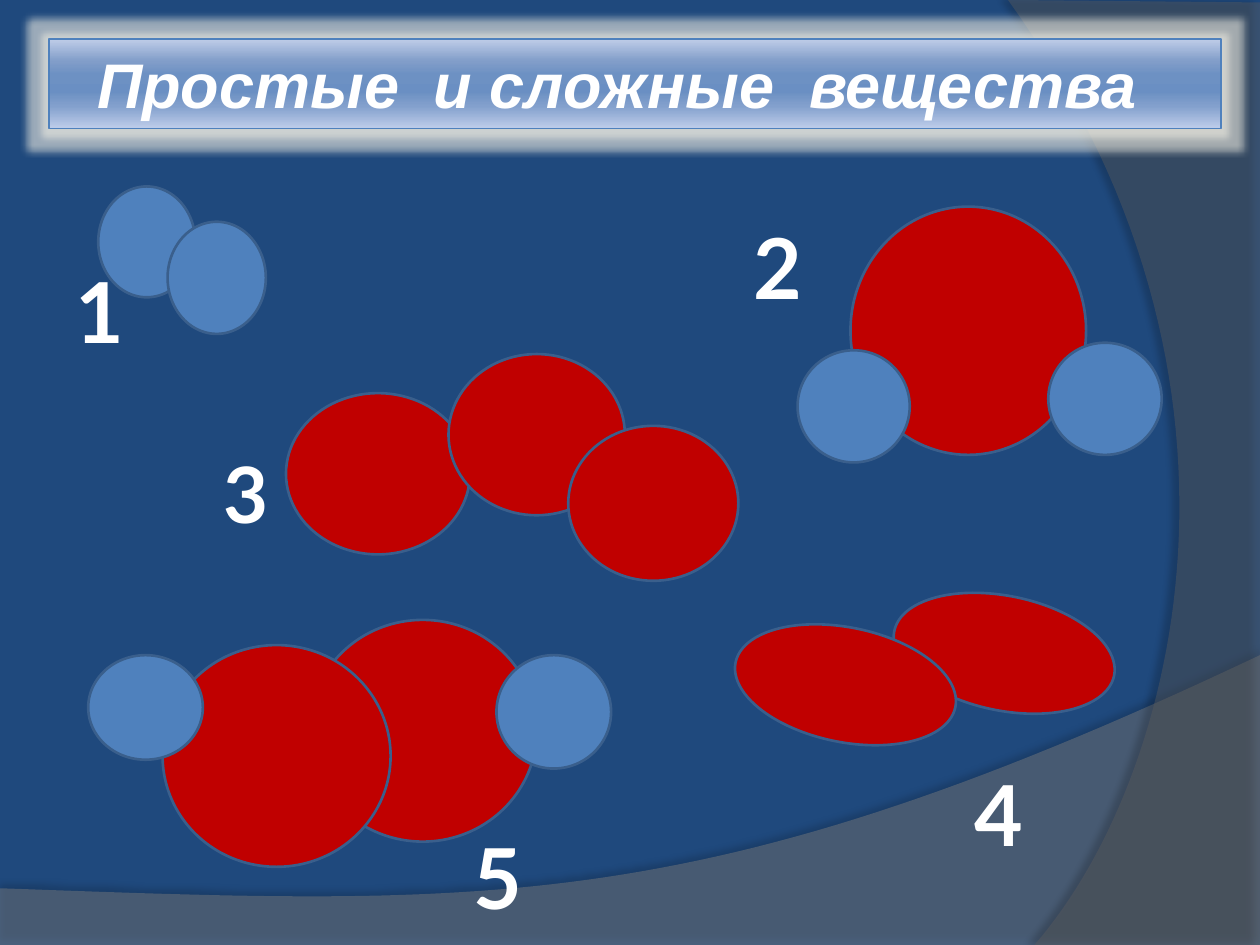
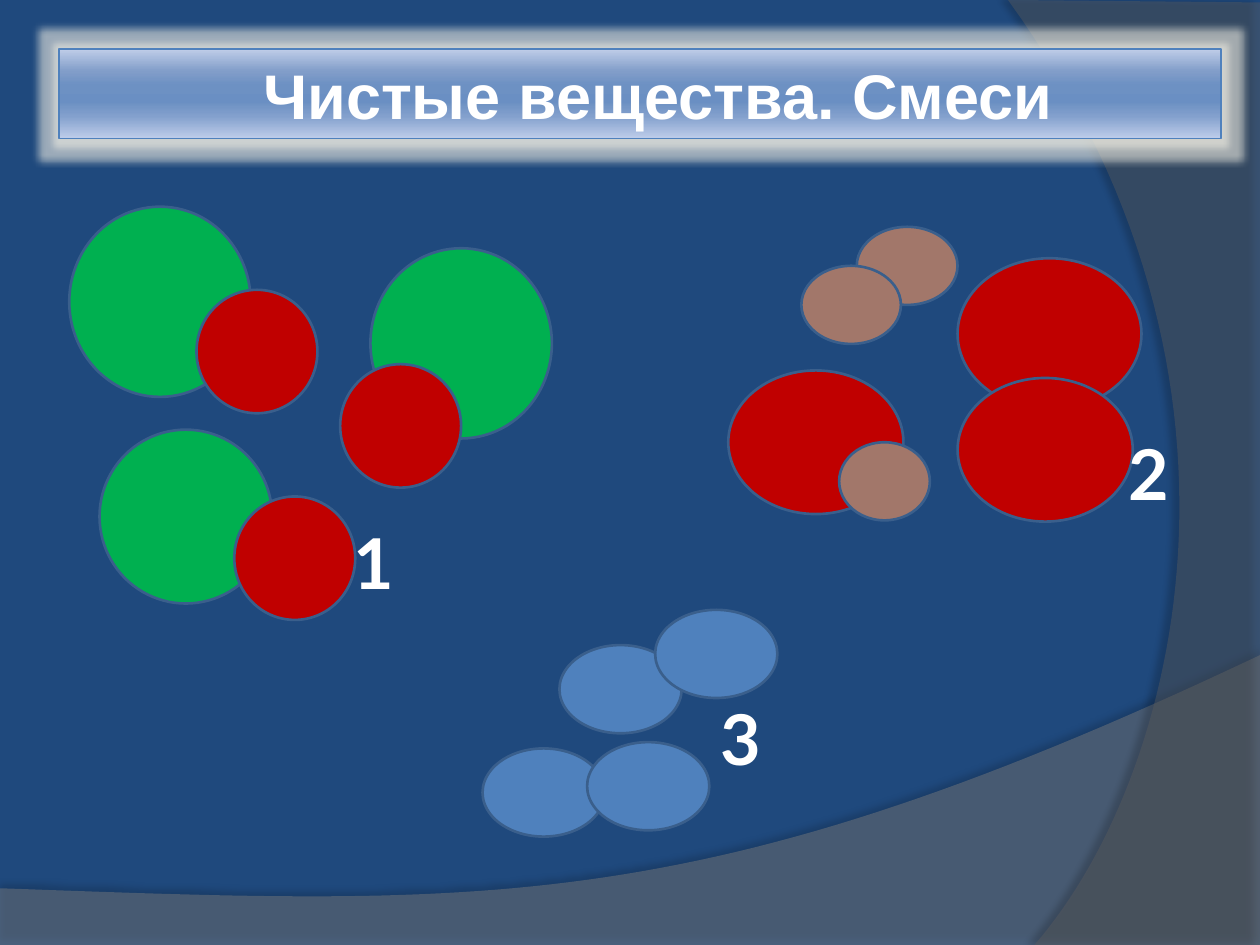
from dataclasses import dataclass

from lxml.etree import SubElement
from pptx import Presentation
from pptx.dml.color import RGBColor
from pptx.enum.shapes import MSO_SHAPE
from pptx.enum.text import MSO_ANCHOR, PP_ALIGN
from pptx.oxml.ns import qn
from pptx.util import Inches, Pt


@dataclass(frozen=True)
class Theme:
    background: str = "1F497D"
    blue: str = "4F81BD"
    red: str = "C00000"
    green: str = "00B050"
    brown: str = "A2776A"
    outline: str = "3A5F8C"
    text: str = "FFFFFF"
    glow: str = "EEECE1"
    shadow: str = "000000"
    title_font: str = "Arial"
    number_font: str = "Lato"
    title_size: float = 36
    outline_width: float = 1.5
    banner_line_width: float = 0.94
    banner_stops: tuple = (
        (0, "BFCDE8"), (25, "819DC9"), (40, "6D91C3"), (50, "6A8FC3"),
        (60, "6D91C3"), (75, "83A0CD"), (100, "BECDEA"))


THEME = Theme()
BLUE, RED, GREEN, BROWN = THEME.blue, THEME.red, THEME.green, THEME.brown

# Content: an atom is (colour, left, top, width, height, optional rotation);
# a number is (text, left, top, width, height, size, alignment, inset)
CENTER, LEFT = PP_ALIGN.CENTER, PP_ALIGN.LEFT
PAGES = [
    {
        "title": "Простые  и сложные  вещества",
        "italic": True,
        "banner": (0.39, 0.31, 9.3, 0.71),
        "insets": (0.1, 0.38),
        "molecules": [
            [(BLUE, 0.78, 1.48, 0.77, 0.88), (BLUE, 1.33, 1.76, 0.78, 0.89)],
            [(RED, 6.75, 1.64, 1.87, 1.97), (BLUE, 6.33, 2.78, 0.89, 0.89),
             (BLUE, 8.32, 2.72, 0.9, 0.89)],
            [(RED, 2.45, 4.92, 1.81, 1.76), (BLUE, 3.94, 5.2, 0.91, 0.9),
             (RED, 1.29, 5.12, 1.81, 1.76), (BLUE, 0.7, 5.2, 0.91, 0.83)],
            [(RED, 2.27, 3.12, 1.46, 1.28), (RED, 3.56, 2.81, 1.4, 1.28),
             (RED, 4.51, 3.38, 1.35, 1.23)],
            [(RED, 7.08, 4.73, 1.78, 0.91, 11.5),
             (RED, 5.82, 4.98, 1.78, 0.91, 11.5)],
        ],
        "numbers": [
            ("1", 0.55, 1.72, 0.7, 1.48, 48, LEFT, 0.05),
            ("2", 5.7, 1.64, 0.94, 0.94, 48, CENTER, 0.1),
            ("3", 1.56, 3.52, 0.78, 0.78, 44.4, CENTER, 0.1),
            ("4", 7.42, 6.02, 1.02, 0.86, 48, CENTER, 0.1),
            ("5", 3.44, 6.41, 1.02, 1.09, 48, CENTER, 0.1),
        ],
    },
    {
        "title": "Чистые вещества. Смеси",
        "italic": False,
        "banner": (0.47, 0.39, 9.22, 0.71),
        "insets": (0.38, 0.1),
        "molecules": [
            [(GREEN, 0.55, 1.64, 1.44, 1.51), (GREEN, 0.79, 3.41, 1.37, 1.38),
             (GREEN, 2.94, 1.97, 1.44, 1.51), (RED, 1.86, 3.94, 0.96, 0.98),
             (RED, 2.7, 2.89, 0.96, 0.98), (RED, 1.56, 2.3, 0.96, 0.98)],
            [(BLUE, left, top, 0.97, 0.7) for left, top in
             ((3.83, 5.94), (4.66, 5.89), (4.44, 5.12), (5.2, 4.84))],
            [(RED, 5.78, 2.94, 1.39, 1.14), (RED, 7.6, 2.05, 1.46, 1.2),
             (BROWN, 6.8, 1.8, 0.8, 0.62), (BROWN, 6.66, 3.51, 0.72, 0.62),
             (RED, 7.6, 3, 1.39, 1.14), (BROWN, 6.36, 2.11, 0.79, 0.62)],
        ],
        "numbers": [
            ("2", 8.91, 3.44, 0.55, 0.62, 40, LEFT, 0.05),
            ("1", 2.58, 3.91, 0.78, 1.09, 40, CENTER, 0.1),
            ("3", 5.62, 5.62, 0.31, 0.47, 40, CENTER, 0.1),
        ],
    },
]

# Background bands: a Bezier edge closed by corner points
BANDS = [
    {"curve": ((10, 5.2), (5.59, 7.29), (3.91, 7.19), (0, 7.05)),
     "corners": [(0, 7.5), (10, 7.5)],
     "color": "7F7F7F", "alpha": 45, "shadow": (35, 4, 3.5, 270)},
    {"curve": ((8.21, 7.5), (9.35, 6.19), (10.18, 3), (8, 0)),
     "corners": [(10, 0.02), (10, 7.5)],
     "color": "5E5E5E", "alpha": 40, "shadow": (45, 4, 4, 180)},
]
CURVE_STEPS = 60


def place(values):
    return [Inches(value) for value in values]


def add_color(parent, color, alpha=100):
    node = SubElement(parent, qn("a:srgbClr"), val=color)
    if alpha < 100:
        SubElement(node, qn("a:alpha"), val=str(alpha * 1000))


def style(shape, fill, line=None, width=THEME.outline_width):
    """Set a plain fill and line; no fill leaves it to the caller."""
    shape.shadow.inherit = False
    if fill:
        shape.fill.solid()
        shape.fill.fore_color.rgb = RGBColor.from_string(fill)
    if line:
        shape.line.color.rgb = RGBColor.from_string(line)
        shape.line.width = Pt(width)
    else:
        shape.line.fill.background()


def add_effect(shape, tag, color, alpha, **settings):
    effects = shape._element.spPr.find(qn("a:effectLst"))
    add_color(SubElement(effects, qn(tag), **settings), color, alpha)


def write(shape, text, font, size, align, insets, italic=False):
    frame = shape.text_frame
    frame.word_wrap = True
    frame.vertical_anchor = MSO_ANCHOR.MIDDLE
    frame.margin_left, frame.margin_right = place(insets)
    frame.text = text
    para = frame.paragraphs[0]
    para.alignment = align
    span = para.runs[0].font
    span.name, span.size, span.bold, span.italic = font, Pt(size), True, italic
    span.color.rgb = RGBColor.from_string(THEME.text)


def curve_points(curve):
    for step in range(CURVE_STEPS + 1):
        t = step / CURVE_STEPS
        weights = ((1 - t) ** 3, 3 * t * (1 - t) ** 2, 3 * t * t * (1 - t), t ** 3)
        yield tuple(sum(weight * point[axis] for weight, point in zip(weights, curve))
                    for axis in (0, 1))


def add_band(page, band):
    start, *rest = [place(point) for point in
                    [*curve_points(band["curve"]), *band["corners"]]]
    builder = page.shapes.build_freeform(*start)
    builder.add_line_segments(rest, close=True)
    shape = builder.convert_to_shape()
    style(shape, band["color"])
    color = shape._element.spPr.find(qn("a:solidFill"))[0]
    SubElement(color, qn("a:alpha"), val=str(band["alpha"] * 1000))
    alpha, blur, distance, angle = band["shadow"]
    add_effect(shape, "a:outerShdw", THEME.shadow, alpha, blurRad=str(Pt(blur)),
               dist=str(Pt(distance)), dir=str(angle * 60000))


def add_molecule(page, atoms):
    group = page.shapes.add_group_shape()
    for color, left, top, width, height, *rotation in atoms:
        atom = group.shapes.add_shape(
            MSO_SHAPE.OVAL, *place((left, top, width, height)))
        style(atom, color, THEME.outline)
        atom.rotation = rotation[0] if rotation else 0


def add_number(page, text, left, top, width, height, size, align, inset):
    box = page.shapes.add_textbox(*place((left, top, width, height)))
    write(box, text, THEME.number_font, size, align, (inset, inset))


def add_banner(page, content):
    banner = page.shapes.add_shape(MSO_SHAPE.RECTANGLE, *place(content["banner"]))
    style(banner, None, THEME.blue, THEME.banner_line_width)
    banner.fill.gradient()
    banner.fill.gradient_angle = 270
    stops = banner._element.spPr.find(qn("a:gradFill")).find(qn("a:gsLst"))
    for stop in list(stops):
        stops.remove(stop)
    for position, color in THEME.banner_stops:
        add_color(SubElement(stops, qn("a:gs"), pos=str(position * 1000)), color)
    add_effect(banner, "a:glow", THEME.glow, 60, rad=str(Pt(8)))
    write(banner, content["title"], THEME.title_font, THEME.title_size,
          CENTER, content["insets"], content["italic"])


def build_page(deck, content):
    page = deck.slides.add_slide(deck.slide_layouts[6])
    page.background.fill.solid()
    page.background.fill.fore_color.rgb = RGBColor.from_string(THEME.background)
    for band in BANDS:
        add_band(page, band)
    for atoms in content["molecules"]:
        add_molecule(page, atoms)
    for number in content["numbers"]:
        add_number(page, *number)
    add_banner(page, content)


def main():
    deck = Presentation()
    deck.slide_width, deck.slide_height = place((10, 7.5))
    for content in PAGES:
        build_page(deck, content)
    deck.save("out.pptx")


if __name__ == "__main__":
    main()
